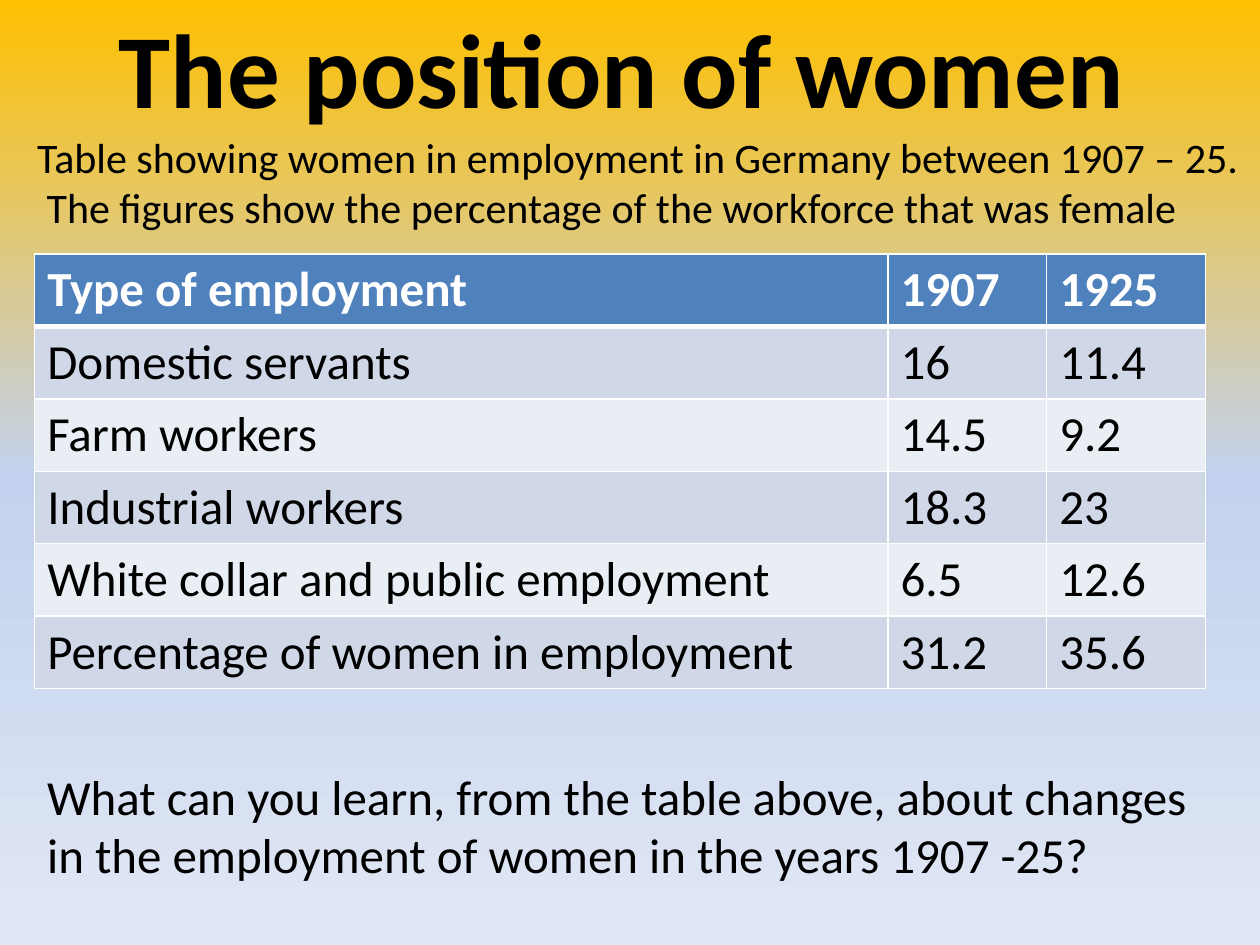
from copy import deepcopy

from lxml import etree
from pptx import Presentation
from pptx import util as u
from pptx.dml.color import RGBColor
from pptx.enum import text
from pptx.oxml.ns import qn

COLORS = {
    "gold": "FFC000", "sky": "C2D1ED", "mist": "E1E8F5",
    "header": "4F81BD", "band_dark": "D0D8E8", "band_light": "E9EDF4",
    "black": "000000", "white": "FFFFFF",
}


def format_runs(text_frame, size, color="black", bold=False):
    for paragraph in text_frame.paragraphs:
        for run in paragraph.runs:
            run.font.name = "Calibri"
            run.font.size = u.Pt(size)
            run.font.bold = bold
            run.font.color.rgb = RGBColor.from_string(COLORS[color])


def add_text(slide, left, top, width, height, lines, size, bold=False):
    """Add a wrapping text box, one paragraph per line, and return its frame."""
    box = slide.shapes.add_textbox(u.Cm(left), u.Cm(top), u.Cm(width), u.Cm(height))
    box.text_frame.word_wrap = True
    box.text_frame.text = "\n".join(lines)
    format_runs(box.text_frame, size, bold=bold)
    return box.text_frame


presentation = Presentation()
presentation.slide_width = u.Cm(25.4)
presentation.slide_height = u.Cm(19.05)
slide = presentation.slides.add_slide(presentation.slide_layouts[6])

# Background: three-stop gradient from top to bottom
background = slide.background.fill
background.gradient()
background.gradient_angle = 270
stop_list = slide.element.find(".//" + qn("a:gsLst"))
stop_list.append(deepcopy(stop_list[-1]))
stops = [("gold", 0), ("sky", 0.5), ("mist", 1)]
for stop, (color, position) in zip(background.gradient_stops, stops):
    stop.color.rgb = RGBColor.from_string(COLORS[color])
    stop.position = position

# Title
title = add_text(slide, 1.1, 0.05, 22.86, 2.58, ["The position of women"], 60, bold=True)
title.vertical_anchor = text.MSO_ANCHOR.MIDDLE
title.paragraphs[0].alignment = text.PP_ALIGN.CENTER

# Employment table
rows = [
    ("Type of employment", "1907", "1925"),
    ("Domestic servants", "16", "11.4"),
    ("Farm workers", "14.5", "9.2"),
    ("Industrial workers", "18.3", "23"),
    ("White collar and public employment", "6.5", "12.6"),
    ("Percentage of women in employment", "31.2", "35.6"),
]
column_widths = [17.2, 3.2, 3.2]
row_height = 1.46
table = slide.shapes.add_table(
    len(rows), len(column_widths), u.Cm(0.7), u.Cm(5.12),
    u.Cm(sum(column_widths)), u.Cm(row_height * len(rows))).table
for column, width in zip(table.columns, column_widths):
    column.width = u.Cm(width)

for row_index, values in enumerate(rows):
    table.rows[row_index].height = u.Cm(row_height)
    is_header = row_index == 0
    fill_color = "header" if is_header else ("band_light", "band_dark")[row_index % 2]
    for column_index, value in enumerate(values):
        cell = table.cell(row_index, column_index)
        cell.text = value
        format_runs(cell.text_frame, 28, "white" if is_header else "black", is_header)
        properties = cell._tc.get_or_add_tcPr()
        for side in "LRTB":
            under_header = (row_index, side) in [(0, "B"), (1, "T")]
            border = etree.SubElement(properties, qn("a:ln" + side),
                                      w=str(u.Pt(3 if under_header else 1)))
            solid = etree.SubElement(border, qn("a:solidFill"))
            etree.SubElement(solid, qn("a:srgbClr"), val=COLORS["white"])
        cell.fill.solid()
        cell.fill.fore_color.rgb = RGBColor.from_string(COLORS[fill_color])

# Question below the table
add_text(slide, 0.7, 15.32, 24, 2.64, [
    "What can you learn, from the table above, about changes "
    "in the employment of women in the years 1907 -25?"], 28)

# Introduction above the table, second line slightly indented
introduction = add_text(slide, 0.5, 2.52, 24.9, 2.31, [
    "Table showing women in employment in Germany between 1907 – 25.",
    "The figures show the percentage of the workforce that was female"], 24)
introduction.paragraphs[1]._p.get_or_add_pPr().set("marL", str(u.Cm(0.19)))

presentation.save("out.pptx")
